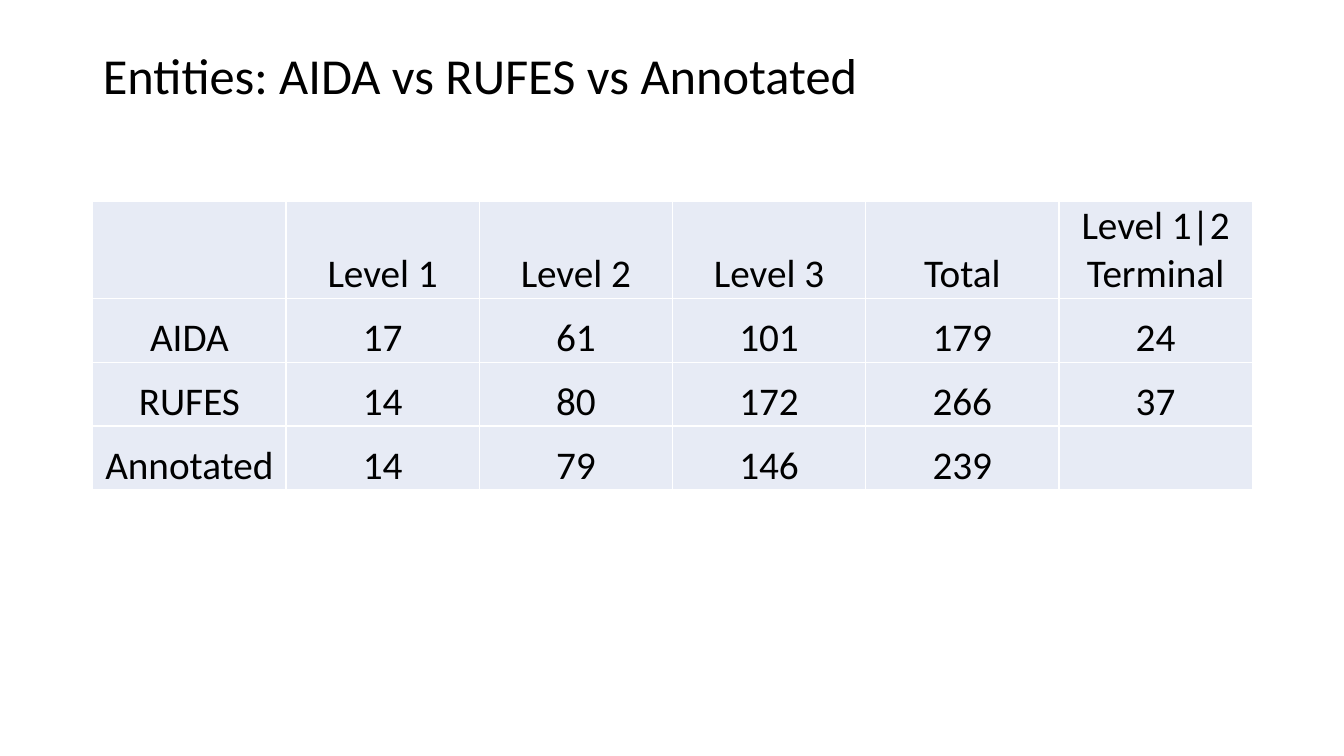
from dataclasses import dataclass

from lxml import etree
from pptx import Presentation
from pptx.dml.color import RGBColor
from pptx.enum.text import MSO_ANCHOR, PP_ALIGN
from pptx.oxml.ns import qn
from pptx.util import Inches, Pt

LEFT, CENTER = PP_ALIGN.LEFT, PP_ALIGN.CENTER
MIDDLE, BOTTOM = MSO_ANCHOR.MIDDLE, MSO_ANCHOR.BOTTOM

TITLE = "Entities: AIDA vs RUFES vs Annotated"
ENTITY_COUNTS = [
    ("", "Level 1", "Level 2", "Level 3", "Total", "Level 1|2 Terminal"),
    ("AIDA", "17", "61", "101", "179", "24"),
    ("RUFES", "14", "80", "172", "266", "37"),
    ("Annotated", "14", "79", "146", "239", ""),
]


@dataclass(frozen=True)
class Theme:
    font: str = "Calibri"
    ink: str = "000000"
    cell: str = "E7EBF5"
    border: str = "FFFFFF"
    border_pt: float = 1
    title_pt: float = 36
    cell_pt: float = 28


THEME = Theme()
SLIDE_W, SLIDE_H = 13.33, 7.5
LEFT_EDGE, CONTENT_W = 0.92, 11.5
TITLE_TOP, TITLE_H = 0.4, 0.75
TABLE_TOP, TABLE_H = 2, 2.85
ROW_SHARES = (3, 2, 2, 2)  # the header holds two lines of text
CELL_INSET = 0.01


def write(tf, text, size, align=LEFT, line_spacing=None):
    p = tf.paragraphs[0]
    p.alignment = align
    p.line_spacing = line_spacing
    p.font.size = Pt(size)
    if text:
        r = p.add_run()
        r.text = text
        r.font.name = THEME.font
        r.font.size = Pt(size)
        r.font.color.rgb = RGBColor.from_string(THEME.ink)


def add_borders(cell):
    tcPr = cell._tc.get_or_add_tcPr()
    for side in ("lnL", "lnR", "lnT", "lnB"):
        ln = etree.SubElement(tcPr, qn(f"a:{side}"), w=str(Pt(THEME.border_pt)))
        fill = etree.SubElement(ln, qn("a:solidFill"))
        etree.SubElement(fill, qn("a:srgbClr"), val=THEME.border)


def add_title(s):
    title = s.shapes.title
    title.left, title.top = Inches(LEFT_EDGE), Inches(TITLE_TOP)
    title.width, title.height = Inches(CONTENT_W), Inches(TITLE_H)
    title.text_frame.vertical_anchor = MIDDLE
    write(title.text_frame, TITLE, THEME.title_pt, line_spacing=0.9)


def add_counts_table(s):
    n_rows, n_cols = len(ENTITY_COUNTS), len(ENTITY_COUNTS[0])
    table = s.shapes.add_table(
        n_rows, n_cols, Inches(LEFT_EDGE), Inches(TABLE_TOP),
        Inches(CONTENT_W), Inches(TABLE_H)).table
    table.first_row = table.horz_banding = False
    for column in table.columns:
        column.width = Inches(CONTENT_W / n_cols)
    for row, share, values in zip(table.rows, ROW_SHARES, ENTITY_COUNTS):
        row.height = Inches(TABLE_H * share / sum(ROW_SHARES))
        for cell, value in zip(row.cells, values):
            add_borders(cell)
            cell.fill.solid()
            cell.fill.fore_color.rgb = RGBColor.from_string(THEME.cell)
            cell.vertical_anchor = BOTTOM
            cell.margin_left = cell.margin_right = cell.margin_top = Inches(CELL_INSET)
            cell.margin_bottom = 0
            write(cell.text_frame, value, THEME.cell_pt, align=CENTER)


def main():
    prs = Presentation()
    prs.slide_width, prs.slide_height = Inches(SLIDE_W), Inches(SLIDE_H)
    s = prs.slides.add_slide(prs.slide_layouts.get_by_name("Title Only"))
    add_title(s)
    add_counts_table(s)
    prs.save("out.pptx")


if __name__ == "__main__":
    main()
